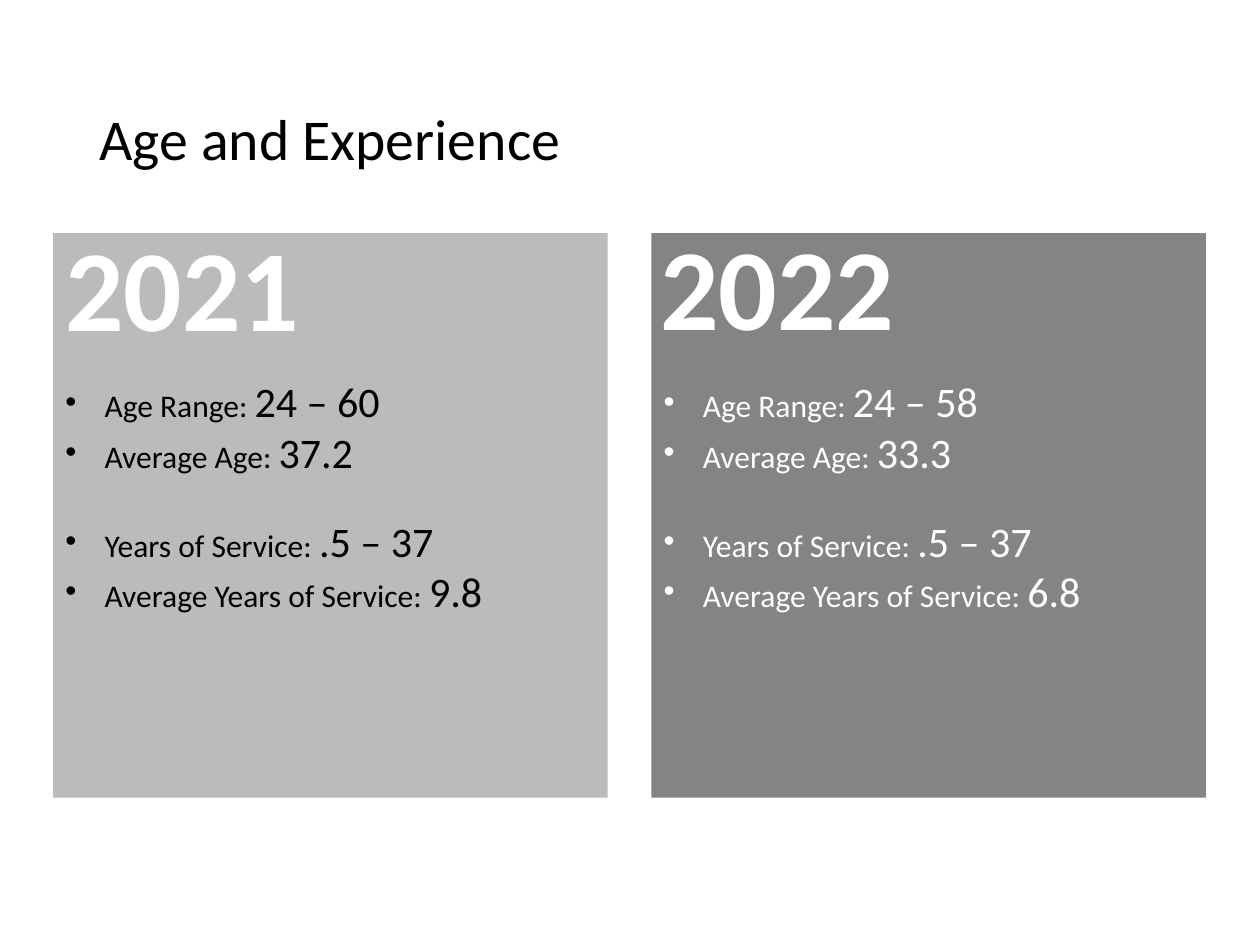
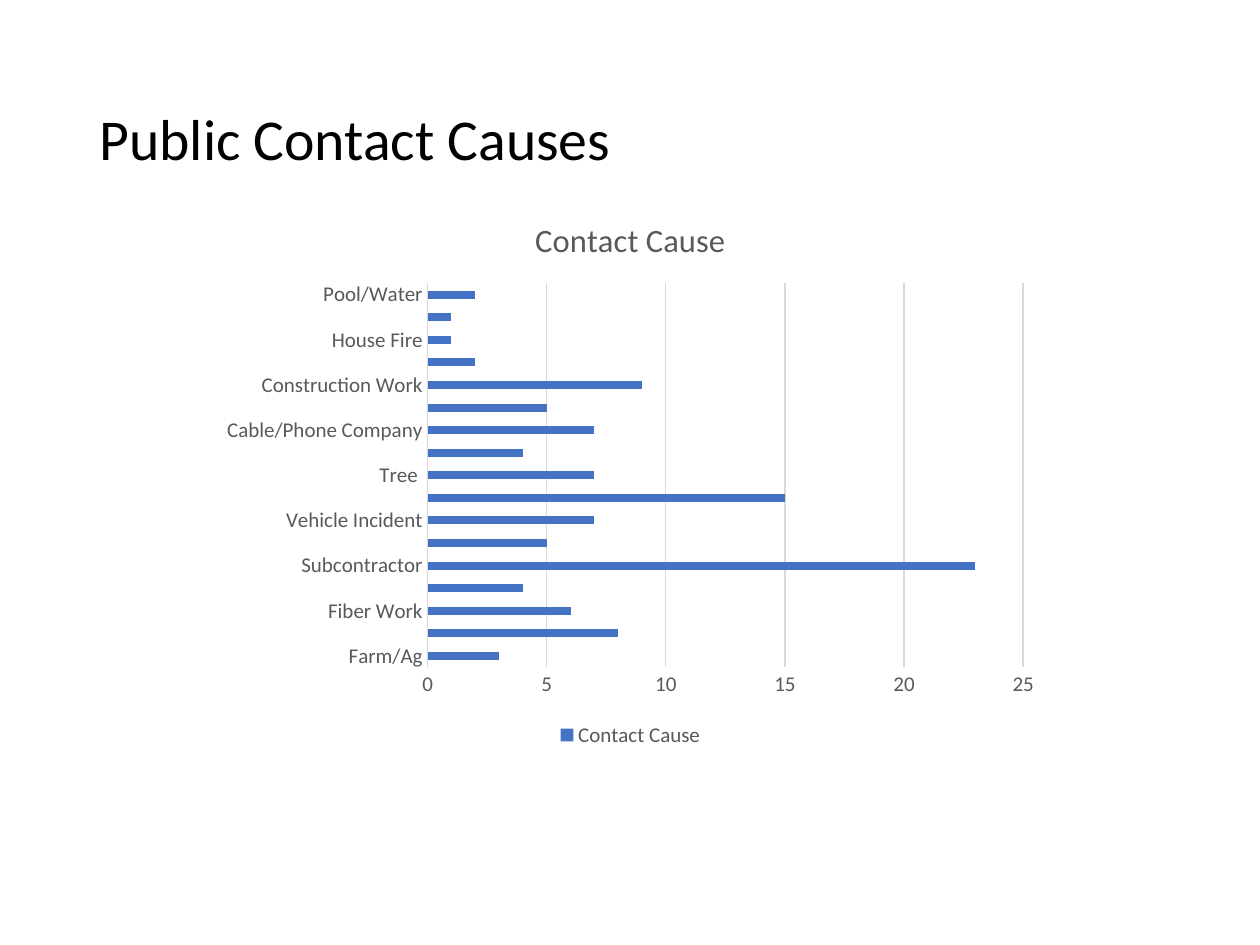
from lxml import etree
from pptx import Presentation
from pptx.chart.data import CategoryChartData
from pptx.dml.color import RGBColor
from pptx.enum.chart import XL_CHART_TYPE, XL_LEGEND_POSITION, XL_TICK_MARK
from pptx.enum.shapes import MSO_SHAPE
from pptx.enum.text import MSO_ANCHOR, MSO_AUTO_SIZE, PP_ALIGN
from pptx.oxml.ns import qn
from pptx.util import Cm, Pt

BAR = XL_CHART_TYPE.BAR_CLUSTERED
BOTTOM = XL_LEGEND_POSITION.BOTTOM
NO_TICK = XL_TICK_MARK.NONE
RECTANGLE = MSO_SHAPE.RECTANGLE
MIDDLE = MSO_ANCHOR.MIDDLE
FIXED = MSO_AUTO_SIZE.NONE
LEFT = PP_ALIGN.LEFT

FONT = "Calibri"
COLOURS = {
    "black": "000000",
    "white": "FFFFFF",
    "mid grey": "7F7F7F",
    "charcoal": "181717",
    "label": "595959",
    "rule": "D9D9D9",
    "bar": "4472C4",
}

PANEL_TOP, PANEL_WIDTH, PANEL_HEIGHT = 4.7, 11.18, 11.38
BULLET_INDENT = 0.79
BLANK_LINE = 22

YEARS = [
    {
        "year": "2021", "left": 1.07, "year_at": (1.07, 4.24),
        "fill": "mid grey", "text": "black",
        "ages": ("24 – 60", "37.2"), "service": (".5 – 37", "9.8"),
    },
    {
        "year": "2022", "left": 13.13, "year_at": (13.06, 4.22),
        "fill": "charcoal", "text": "white",
        "ages": ("24 – 58", "33.3"), "service": (".5 – 37", "6.8"),
    },
]

CONTACT_CAUSES = {
    "Farm/Ag": 3,
    "Downed Line": 8,
    "Fiber Work": 6,
    "Dump Truck": 4,
    "Subcontractor": 23,
    "Electrician": 5,
    "Vehicle Incident": 7,
    "Member Issue": 15,
    "Tree ": 7,
    "Ladder": 4,
    "Cable/Phone Company": 7,
    "Plane/Aerial Device": 5,
    "Construction Work": 9,
    "Flagpole": 2,
    "House Fire": 1,
    "Theft": 1,
    "Pool/Water": 2,
}


class SlideBuilder:
    def __init__(self, deck):
        self.deck = deck
        self.slide = None

    def colour(self, name):
        return RGBColor.from_string(COLOURS[name])

    def style(self, font, size, colour, bold=False):
        font.name = FONT
        font.size = Pt(size)
        font.bold = bold
        font.color.rgb = self.colour(colour)

    def span(self, para, text, size, colour, bold=False):
        run = para.add_run()
        run.text = text
        self.style(run.font, size, colour, bold)

    def new_slide(self, title):
        self.slide = self.deck.slides.add_slide(self.deck.slide_layouts[5])
        box = self.slide.shapes.title
        box.left, box.top = Cm(1.75), Cm(1.02)
        box.width, box.height = Cm(21.89), Cm(3.68)
        frame = box.text_frame
        frame.auto_size = FIXED
        frame.vertical_anchor = MIDDLE
        para = frame.paragraphs[0]
        para.alignment = LEFT
        para.line_spacing = 0.9
        self.span(para, title, 33, "black")

    def bullet(self, para):
        props = para._p.get_or_add_pPr()
        props.set("marL", str(Cm(BULLET_INDENT)))
        props.set("indent", str(-Cm(BULLET_INDENT)))
        etree.SubElement(props, qn("a:buFont"), typeface="Arial")
        etree.SubElement(props, qn("a:buChar"), char="•")

    def panel(self, left, fill, colour, groups):
        box = self.slide.shapes.add_shape(
            RECTANGLE, Cm(left), Cm(PANEL_TOP), Cm(PANEL_WIDTH), Cm(PANEL_HEIGHT))
        box.shadow.inherit = False
        box.line.fill.background()
        box.fill.solid()
        box.fill.fore_color.rgb = self.colour(fill)
        tint = box._element.spPr.find(qn("a:solidFill"))[0]
        etree.SubElement(tint, qn("a:alpha"), val="53000")
        frame = box.text_frame
        frame.word_wrap = True
        frame.vertical_anchor = MIDDLE
        frame.margin_bottom = Cm(0.13) + Pt(BLANK_LINE)
        para = frame.paragraphs[0]
        for group_number, group in enumerate(groups):
            for row, (label, value) in enumerate(group):
                if group_number or row:
                    para = frame.add_paragraph()
                para.alignment = LEFT
                if group_number and row == 0:
                    para.space_before = Pt(BLANK_LINE)
                self.bullet(para)
                self.span(para, label, 18, colour)
                self.span(para, value, 24, colour)

    def year_label(self, left, top, year):
        box = self.slide.shapes.add_textbox(Cm(left), Cm(top), Cm(6.99), Cm(3.07))
        box.text_frame.word_wrap = True
        self.span(box.text_frame.paragraphs[0], year, 66, "white", bold=True)

    def rule(self, line):
        line.color.rgb = self.colour("rule")
        line.width = Pt(0.75)

    def bar_chart(self, name, values):
        data = CategoryChartData()
        data.categories = list(values)
        data.add_series(name, list(values.values()))
        chart = self.slide.shapes.add_chart(
            BAR, Cm(4.24), Cm(3.89), Cm(16.94), Cm(11.28), data).chart
        self.style(chart.font, 10, "black")

        chart.has_title = True
        title = chart.chart_title
        title.include_in_layout = False
        self.span(title.text_frame.paragraphs[0], name, 18.6, "label")

        chart.has_legend = True
        chart.legend.position = BOTTOM
        chart.legend.include_in_layout = False
        self.style(chart.legend.font, 12, "label")

        for axis in (chart.category_axis, chart.value_axis):
            axis.major_tick_mark = NO_TICK
            axis.minor_tick_mark = NO_TICK
            self.style(axis.tick_labels.font, 12, "label")
        self.rule(chart.category_axis.format.line)
        chart.value_axis.format.line.fill.background()
        chart.value_axis.has_major_gridlines = True
        self.rule(chart.value_axis.major_gridlines.format.line)

        plot = chart.plots[0]
        plot.gap_width = 182
        plot.vary_by_categories = False
        bars = plot.series[0].format.fill
        bars.solid()
        bars.fore_color.rgb = self.colour("bar")


def main():
    deck = Presentation()
    deck.slide_width, deck.slide_height = Cm(25.4), Cm(19.05)
    builder = SlideBuilder(deck)

    builder.new_slide("Age and Experience")
    for year in YEARS:
        groups = [
            zip(("Age Range: ", "Average Age: "), year["ages"]),
            zip(("Years of Service: ", "Average Years of Service: "), year["service"]),
        ]
        builder.panel(year["left"], year["fill"], year["text"], groups)
    for year in YEARS:
        builder.year_label(*year["year_at"], year["year"])

    builder.new_slide("Public Contact Causes")
    builder.bar_chart("Contact Cause", CONTACT_CAUSES)

    deck.save("out.pptx")


if __name__ == "__main__":
    main()
